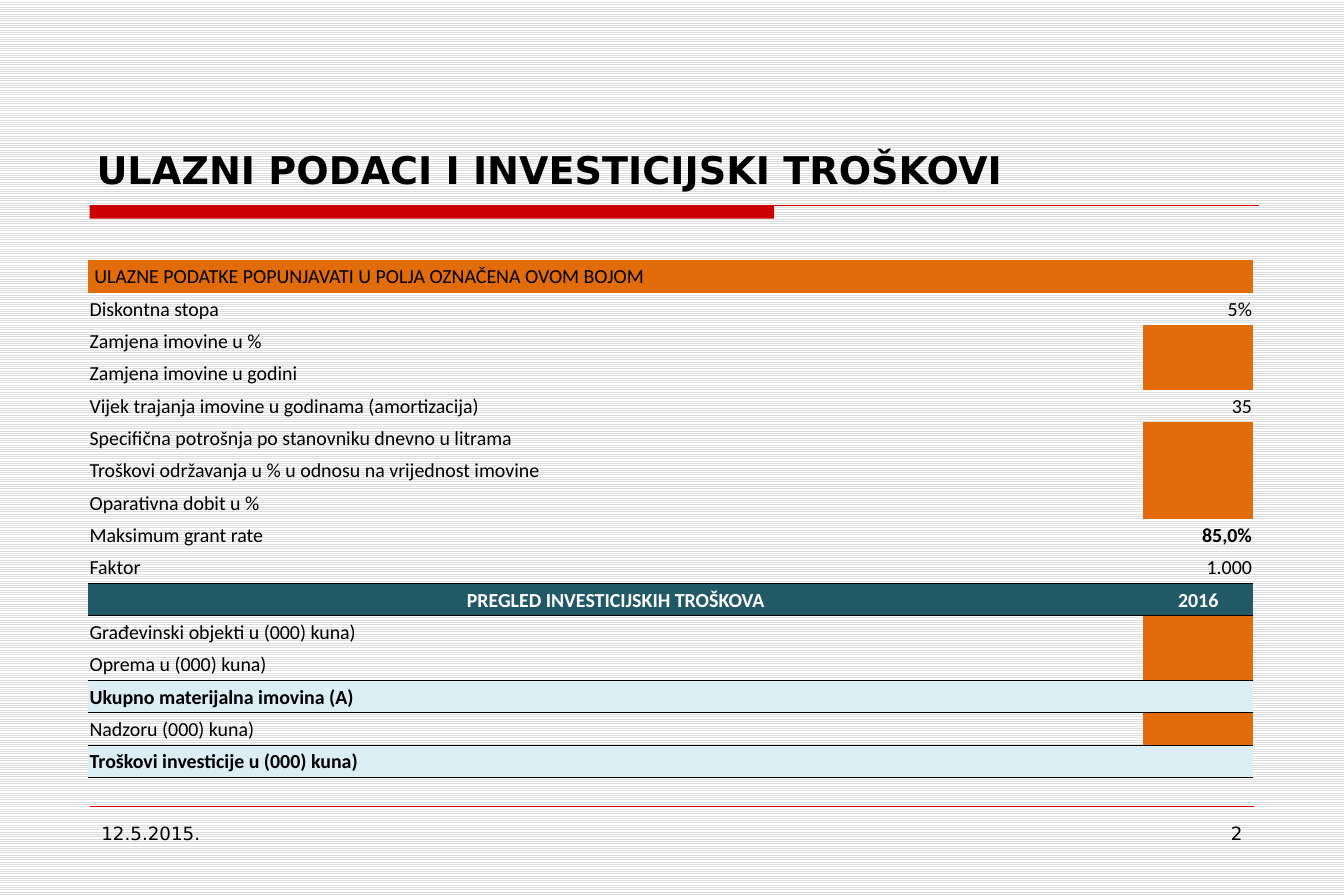
from pptx import Presentation
from pptx.dml.color import RGBColor as RGB
from pptx.enum.dml import MSO_PATTERN as PATTERN
from pptx.enum.shapes import MSO_CONNECTOR as CONN, MSO_SHAPE as SHAPE
from pptx.enum.text import MSO_ANCHOR as ANCHOR, PP_ALIGN as ALIGN
from pptx.oxml.xmlchemy import OxmlElement as Elem
from pptx.util import Inches, Pt

COLORS = {
    "black": "000000", "white": "FFFFFF", "stripe": "DDDDDD", "red": "CC0000",
    "input": "E26B0A", "head": "215967", "total": "DAEEF3",
}

# Kind, label, value; an "input" row has an empty coloured value cell
ROWS = [
    ("banner", "ULAZNE PODATKE POPUNJAVATI U POLJA OZNAČENA OVOM BOJOM", ""),
    ("fixed", "Diskontna stopa", "5%"),
    ("input", "Zamjena imovine u %", ""),
    ("input", "Zamjena imovine u godini", ""),
    ("fixed", "Vijek trajanja imovine u godinama (amortizacija)", "35"),
    ("input", "Specifična potrošnja po stanovniku dnevno u litrama", ""),
    ("input", "Troškovi održavanja u % u odnosu na vrijednost imovine", ""),
    ("input", "Oparativna dobit u %", ""),
    ("grant", "Maksimum grant rate", "85,0%"),
    ("fixed", "Faktor", "1.000"),
    ("head", "PREGLED INVESTICIJSKIH TROŠKOVA", "2016"),
    ("input", "Građevinski objekti u (000) kuna)", ""),
    ("input", "Oprema u (000) kuna)", ""),
    ("total", "Ukupno materijalna imovina (A)", ""),
    ("input", "Nadzoru (000) kuna)", ""),
    ("total", "Troškovi investicije u (000) kuna)", ""),
]

# Fills of the label and value cells, by kind of row
FILLS = {
    "banner": ("input", "input"), "fixed": (None, None), "grant": (None, None),
    "input": (None, "input"), "head": ("head", "head"), "total": ("total", "total"),
}


def color(name):
    return RGB.from_string(COLORS[name])


class Deck:
    font = "DejaVu Sans"
    cell_font = "Calibri"
    cell_size = 12

    def __init__(self, width, height):
        self.prs = Presentation()
        self.prs.slide_width = Inches(width)
        self.prs.slide_height = Inches(height)
        self.slide = self.prs.slides.add_slide(self.prs.slide_layouts[6])
        self.shapes = self.slide.shapes

    def stripes(self):
        fill = self.slide.background.fill
        fill.patterned()
        fill.pattern = PATTERN.LIGHT_HORIZONTAL
        fill.fore_color.rgb = color("stripe")
        fill.back_color.rgb = color("white")

    def bar(self, left, top, width, height, hue):
        box = self.shapes.add_shape(
            SHAPE.RECTANGLE, Inches(left), Inches(top), Inches(width), Inches(height))
        box.shadow.inherit = False
        box.fill.solid()
        box.fill.fore_color.rgb = color(hue)
        box.line.fill.background()

    def rule(self, left, right, y, hue, weight):
        line = self.shapes.add_connector(
            CONN.STRAIGHT, Inches(left), Inches(y), Inches(right), Inches(y))
        line.line.color.rgb = color(hue)
        line.line.width = Pt(weight)
        line._element.spPr.append(Elem("a:effectLst"))

    def style(self, para, font, size, hue="black", bold=False):
        for run in para.runs:
            run.font.name = font
            run.font.size = Pt(size)
            run.font.bold = bold
            run.font.color.rgb = color(hue)

    def text(self, left, top, width, height, words, size,
             bold=False, align=ALIGN.LEFT, anchor=ANCHOR.TOP):
        box = self.shapes.add_textbox(
            Inches(left), Inches(top), Inches(width), Inches(height))
        frame = box.text_frame
        frame.word_wrap = True
        frame.vertical_anchor = anchor
        frame.text = words
        para = frame.paragraphs[0]
        para.alignment = align
        self.style(para, self.font, size, bold=bold)

    def edge(self, cell, side, drawn):
        line = Elem(f"a:ln{side}")
        line.set("w", str(Pt(0.5)))
        fill = Elem("a:solidFill" if drawn else "a:noFill")
        if drawn:
            hue = Elem("a:srgbClr")
            hue.set("val", COLORS["black"])
            fill.append(hue)
        line.append(fill)
        cell._tc.get_or_add_tcPr().append(line)

    def cell(self, cell, words, fill, align, hue, bold, edges):
        for side in "LRTB":
            self.edge(cell, side, side in edges)
        if fill:
            cell.fill.solid()
            cell.fill.fore_color.rgb = color(fill)
        else:
            cell.fill.background()
        cell.margin_left = cell.margin_right = cell.margin_top = Inches(0.01)
        cell.margin_bottom = 0
        cell.vertical_anchor = ANCHOR.MIDDLE
        cell.text_frame.text = words
        para = cell.text_frame.paragraphs[0]
        para.alignment = align
        self.style(para, self.cell_font, self.cell_size, hue, bold)
        if not words:
            # Keep empty cells from stretching the row
            end = Elem("a:endParaRPr")
            end.set("sz", str(self.cell_size * 100))
            para._p.append(end)

    def table(self, left, top, widths, height, rows):
        table = self.shapes.add_table(
            len(rows), len(widths), Inches(left), Inches(top),
            Inches(sum(widths)), Inches(height)).table
        table.first_row = table.horz_banding = False
        for col, width in zip(table.columns, widths):
            col.width = Inches(width)
        # Lines run above and below each heading and total
        ruled = {i + n for i, row in enumerate(rows)
                 if row[0] in ("head", "total") for n in (0, 1)}
        for i, (kind, *words) in enumerate(rows):
            table.rows[i].height = Inches(height / len(rows))
            edges = ("T" if i in ruled else "") + ("B" if i + 1 in ruled else "")
            head = kind == "head"
            for j, word in enumerate(words):
                align = ALIGN.CENTER if head else (ALIGN.LEFT, ALIGN.RIGHT)[j]
                bold = head or kind == "total" or (kind == "grant" and j == 1)
                self.cell(table.cell(i, j), word, FILLS[kind][j], align,
                          "white" if head else "black", bold, edges)
            if kind == "banner":
                table.cell(i, 0).margin_left = Inches(0.05)

    def save(self):
        self.prs.save("out.pptx")


def main():
    deck = Deck(11.25, 7.5)
    deck.stripes()

    # Title with its red bar and line
    deck.bar(0.75, 1.72, 5.73, 0.11, "red")
    deck.rule(0.75, 10.54, 1.72, "red", 0.75)
    deck.text(0.71, 0.33, 9.84, 1.33, "ULAZNI PODACI I INVESTICIJSKI TROŠKOVI",
              23, bold=True, anchor=ANCHOR.BOTTOM)

    # Input data and investment costs
    deck.table(0.74, 2.18, (8.83, 0.92), 4.33, ROWS)

    # Footer
    deck.rule(0.75, 10.5, 6.75, "red", 0.25)
    deck.text(0.75, 6.83, 2.43, 0.52, "12.5.2015.", 11)
    deck.text(8.07, 6.83, 2.43, 0.52, "2", 11, align=ALIGN.RIGHT)

    deck.save()


if __name__ == "__main__":
    main()
